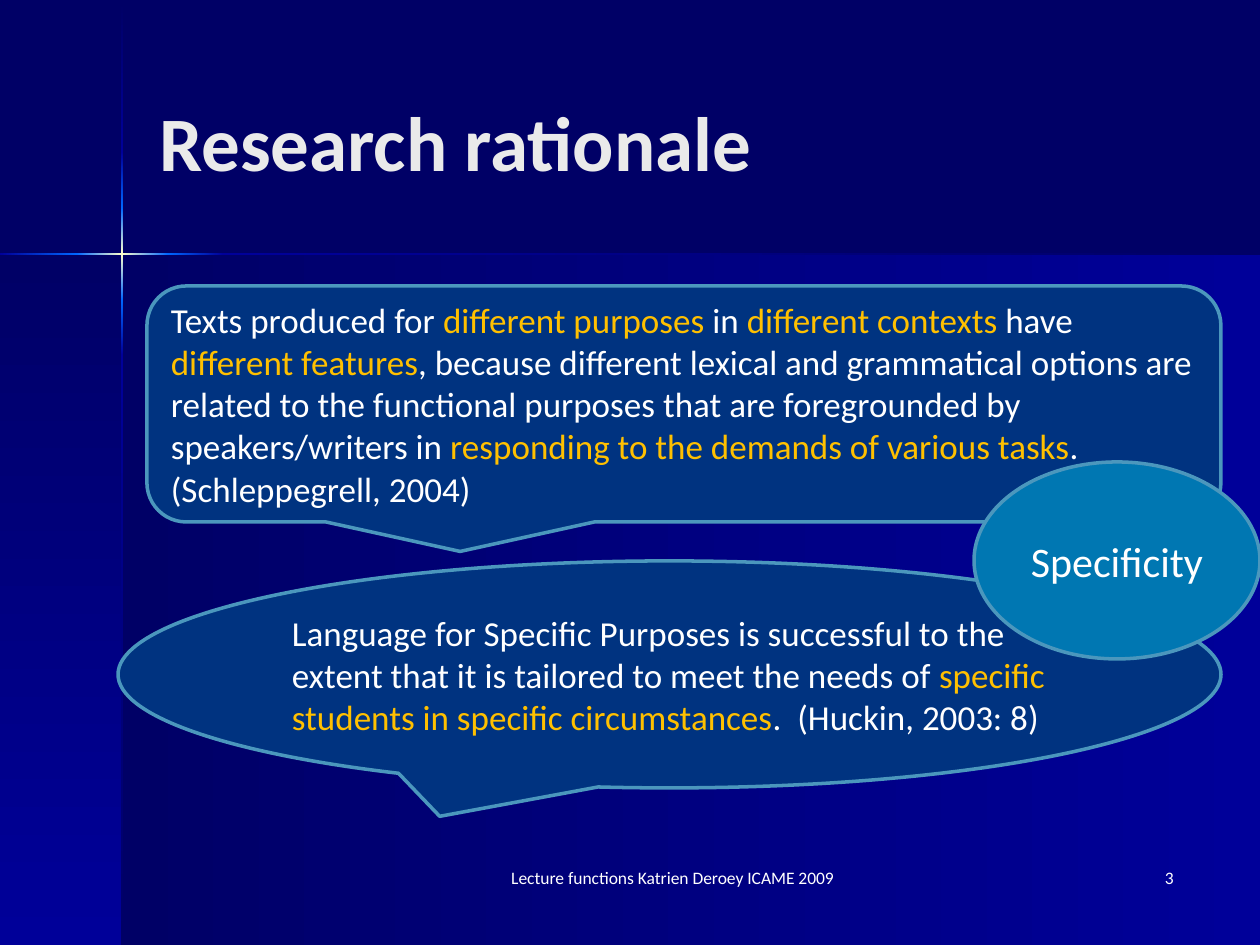
from itertools import pairwise

from pptx import Presentation
from pptx.dml.color import RGBColor
from pptx.enum.shapes import MSO_SHAPE
from pptx.enum.text import MSO_ANCHOR, PP_ALIGN
from pptx.util import Emu, Pt

RECT = MSO_SHAPE.RECTANGLE
OVAL = MSO_SHAPE.OVAL
OVAL_CALLOUT = MSO_SHAPE.OVAL_CALLOUT
ROUND_CALLOUT = MSO_SHAPE.ROUNDED_RECTANGULAR_CALLOUT
LEFT, CENTER, RIGHT = PP_ALIGN.LEFT, PP_ALIGN.CENTER, PP_ALIGN.RIGHT
TOP, MIDDLE = MSO_ANCHOR.TOP, MSO_ANCHOR.MIDDLE

PX_PER_INCH = 126
WIDTH, HEIGHT = 1260, 945
COLORS = {
    "navy": "000066", "blue": "000099", "bright": "0066FF", "glow": "FFFFCC",
    "title": "EAEAEA", "white": "FFFFFF", "accent": "FFC000",
    "callout": "003380", "oval": "0077B2", "outline": "4B97BD",
}


def px(value):
    return Emu(round(value * 914400 / PX_PER_INCH))


def rgb(name):
    return RGBColor.from_string(COLORS[name])


class SlideBuilder:
    font = "Calibri"
    line_width = Pt(2)

    def __init__(self, slide):
        self.s = slide

    def background(self, color):
        fill = self.s.background.fill
        fill.solid()
        fill.fore_color.rgb = rgb(color)

    def gradient(self, box, start, end, vertical=False):
        sp = self.s.shapes.add_shape(RECT, *map(px, box))
        sp.shadow.inherit = False
        sp.line.fill.background()
        sp.fill.gradient()
        sp.fill.gradient_angle = 270 if vertical else 0
        for stop, color in zip(sp.fill.gradient_stops, (start, end)):
            stop.color.rgb = rgb(color)

    def light_ray(self, stops, offset, thickness, vertical=False):
        for (a, start), (b, end) in pairwise(stops):
            box = (a, offset, b - a, thickness)
            if vertical:
                box = (offset, a, thickness, b - a)
            self.gradient(box, start, end, vertical)

    def set_text(self, sp, text, size, color="white", align=LEFT, anchor=MIDDLE, bold=False):
        """Fill in text; parts between asterisks take the accent colour."""
        tf = sp.text_frame
        tf.word_wrap = True
        tf.vertical_anchor = anchor
        p = tf.paragraphs[0]
        p.alignment = align
        for i, part in enumerate(text.split("*")):
            r = p.add_run()
            r.text = part
            for key, value in {"name": self.font, "size": Pt(size), "bold": bold}.items():
                setattr(r.font, key, value)
            r.font.color.rgb = rgb("accent" if i % 2 else color)

    def text(self, box, text, size, **style):
        self.set_text(self.s.shapes.add_textbox(*map(px, box)), text, size, **style)

    def shape(self, kind, box, fill, text, size, **style):
        sp = self.s.shapes.add_shape(kind, *map(px, box))
        sp.shadow.inherit = False
        sp.fill.solid()
        sp.fill.fore_color.rgb = rgb(fill)
        sp.line.color.rgb = rgb("outline")
        sp.line.width = self.line_width
        self.set_text(sp, text, size, **style)


def main():
    prs = Presentation()
    prs.slide_width, prs.slide_height = px(WIDTH), px(HEIGHT)
    b = SlideBuilder(prs.slides.add_slide(prs.slide_layouts[6]))

    # Background panels
    cross_x, cross_y = 122, 255
    b.background("navy")
    b.gradient((cross_x, cross_y, WIDTH - cross_x, HEIGHT - cross_y), "navy", "blue")
    b.gradient((0, cross_y, cross_x, HEIGHT - cross_y), "navy", "blue", vertical=True)

    # Crossing light rays
    b.light_ray([(1, "navy"), (152, "blue"), (208, "bright"), (254, "glow"),
                 (300, "bright"), (355, "blue"), (HEIGHT, "navy")],
                cross_x - 1, 2, vertical=True)
    b.light_ray([(0, "blue"), (77, "bright"), (122, "glow"), (168, "bright"),
                 (223, "blue"), (WIDTH, "navy")], cross_y - 2, 2)

    # Title and footer
    b.text((147, 42, 1040, 198), "Research rationale", 44, color="title", bold=True)
    b.text((473, 861, 399, 63), "Lecture functions Katrien Deroey ICAME 2009", 10,
           align=CENTER, anchor=TOP)
    b.text((924, 861, 262, 63), "3", 10, align=RIGHT, anchor=TOP)

    # Quotations and key word
    b.shape(OVAL_CALLOUT, (118, 561, 1103, 227), "callout",
            "Language for Specific Purposes is successful to the extent that it is "
            "tailored to meet the needs of *specific students in specific "
            "circumstances*.  (Huckin, 2003: 8)", 20)
    b.shape(ROUND_CALLOUT, (147, 286, 1074, 236), "callout",
            "Texts produced for *different purposes* in *different contexts* have "
            "*different features*, because different lexical and grammatical options "
            "are related to the functional purposes that are foregrounded by "
            "speakers/writers in *responding to the demands of various tasks*. "
            "(Schleppegrell, 2004)", 20)
    b.shape(OVAL, (974, 462, 286, 197), "oval", "Specificity", 24, align=CENTER)

    prs.save("out.pptx")


if __name__ == "__main__":
    main()
